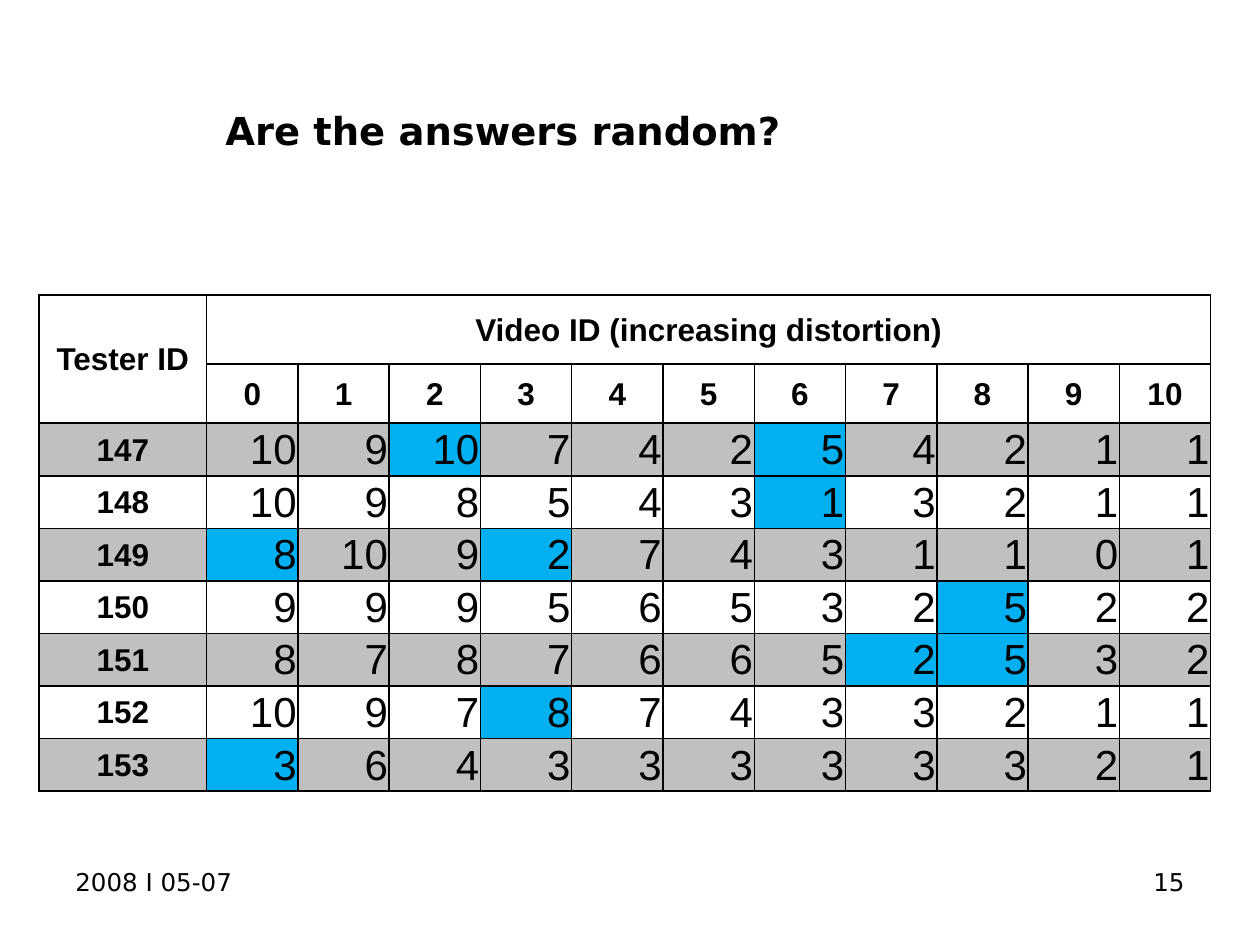
from lxml import etree
from pptx import Presentation, util as u
from pptx.dml.color import RGBColor
from pptx.enum import text
from pptx.oxml import ns

COLORS = {"ink": "000000", "paper": "FFFFFF", "band": "C0C0C0", "outlier": "00B0F0"}
CENTER, LEFT, RIGHT = text.PP_ALIGN.CENTER, text.PP_ALIGN.LEFT, text.PP_ALIGN.RIGHT
MIDDLE, TOP = text.MSO_ANCHOR.MIDDLE, text.MSO_ANCHOR.TOP

LABELS = [
    ("Are the answers random?", (1.69, 0.52, 7.81, 1.03),
     {"size": 22, "bold": True, "anchor": MIDDLE}),
    ("2008 I 05-07", (0.5, 6.83, 2.33, 0.52), {"size": 14}),
    ("15", (7.17, 6.83, 2.33, 0.52), {"size": 14, "align": RIGHT}),
]
TESTER_HEADING = "Tester ID"
VIDEO_HEADING = "Video ID (increasing distortion)"
SCORES = {
    147: [10, 9, 10, 7, 4, 2, 5, 4, 2, 1, 1],
    148: [10, 9, 8, 5, 4, 3, 1, 3, 2, 1, 1],
    149: [8, 10, 9, 2, 7, 4, 3, 1, 1, 0, 1],
    150: [9, 9, 9, 5, 6, 5, 3, 2, 5, 2, 2],
    151: [8, 7, 8, 7, 6, 6, 5, 2, 5, 3, 2],
    152: [10, 9, 7, 8, 7, 4, 3, 3, 2, 1, 1],
    153: [3, 6, 4, 3, 3, 3, 3, 3, 3, 2, 1],
}
OUTLIERS = {147: [2, 6], 148: [6], 149: [0, 3], 150: [8], 151: [7, 8], 152: [3], 153: [0]}
VIDEOS = 11
TABLE_AREA = (0.31, 2.34, 9.3, 3.94)
TESTER_WIDTH = 1.33
HEADER_HEIGHTS = [0.55, 0.47]


def write(frame, words, size=18, bold=False, align=LEFT, font="DejaVu Sans"):
    para = frame.paragraphs[0]
    para.alignment = align
    span = para.add_run()
    span.text = words
    span.font.size = u.Pt(size)
    span.font.bold = bold
    span.font.name = font
    span.font.color.rgb = RGBColor.from_string(COLORS["ink"])


def add_label(page, words, area, anchor=TOP, **style):
    box = page.shapes.add_textbox(*map(u.Inches, area))
    box.text_frame.word_wrap = True
    box.text_frame.vertical_anchor = anchor
    write(box.text_frame, words, **style)


def set_borders(cell, top, bottom):
    properties = cell._tc.get_or_add_tcPr()
    for side, points in (("L", 1), ("R", 1), ("T", top), ("B", bottom)):
        line = etree.SubElement(properties, ns.qn(f"a:ln{side}"), w=str(u.Pt(points)))
        fill = etree.SubElement(line, ns.qn("a:solidFill"))
        etree.SubElement(fill, ns.qn("a:srgbClr"), val=COLORS["ink"])


def fill_cell(cell, words, color="paper", **style):
    cell.fill.solid()
    cell.fill.fore_color.rgb = RGBColor.from_string(COLORS[color])
    cell.vertical_anchor = MIDDLE
    cell.margin_left = cell.margin_right = cell.margin_top = u.Inches(0.01)
    cell.margin_bottom = 0
    write(cell.text_frame, words, font="Arial", **style)


def add_score_table(page):
    heads = len(HEADER_HEIGHTS)
    rows = heads + len(SCORES)
    frame = page.shapes.add_table(rows, VIDEOS + 1, *map(u.Inches, TABLE_AREA))
    table = frame.table
    table.first_row = table.horz_banding = False

    width, height = TABLE_AREA[2:]
    widths = [TESTER_WIDTH] + [(width - TESTER_WIDTH) / VIDEOS] * VIDEOS
    score_height = (height - sum(HEADER_HEIGHTS)) / len(SCORES)
    heights = HEADER_HEIGHTS + [score_height] * len(SCORES)
    for column, size in zip(table.columns, widths):
        column.width = u.Inches(size)
    for row, size in enumerate(heights):
        table.rows[row].height = u.Inches(size)
        for cell in table.rows[row].cells:
            set_borders(cell, 1.5 if row in (1, 2) else 1, 1.5 if row in (0, 1) else 1)

    heading = {"bold": True, "align": CENTER}
    table.cell(0, 0).merge(table.cell(1, 0))
    table.cell(0, 1).merge(table.cell(0, VIDEOS))
    fill_cell(table.cell(0, 0), TESTER_HEADING, **heading)
    fill_cell(table.cell(0, 1), VIDEO_HEADING, **heading)
    for video in range(VIDEOS):
        fill_cell(table.cell(1, video + 1), str(video), **heading)

    for row, (tester, scores) in enumerate(SCORES.items(), heads):
        band = "paper" if (row - heads) % 2 else "band"
        fill_cell(table.cell(row, 0), str(tester), band, **heading)
        for video, score in enumerate(scores):
            color = "outlier" if video in OUTLIERS[tester] else band
            fill_cell(table.cell(row, video + 1), str(score), color, size=24, align=RIGHT)


def main():
    deck = Presentation()
    deck.slide_width, deck.slide_height = u.Inches(10), u.Inches(7.5)
    page = deck.slides.add_slide(deck.slide_layouts[6])
    for words, area, style in LABELS:
        add_label(page, words, area, **style)
    add_score_table(page)
    deck.save("out.pptx")


if __name__ == "__main__":
    main()
